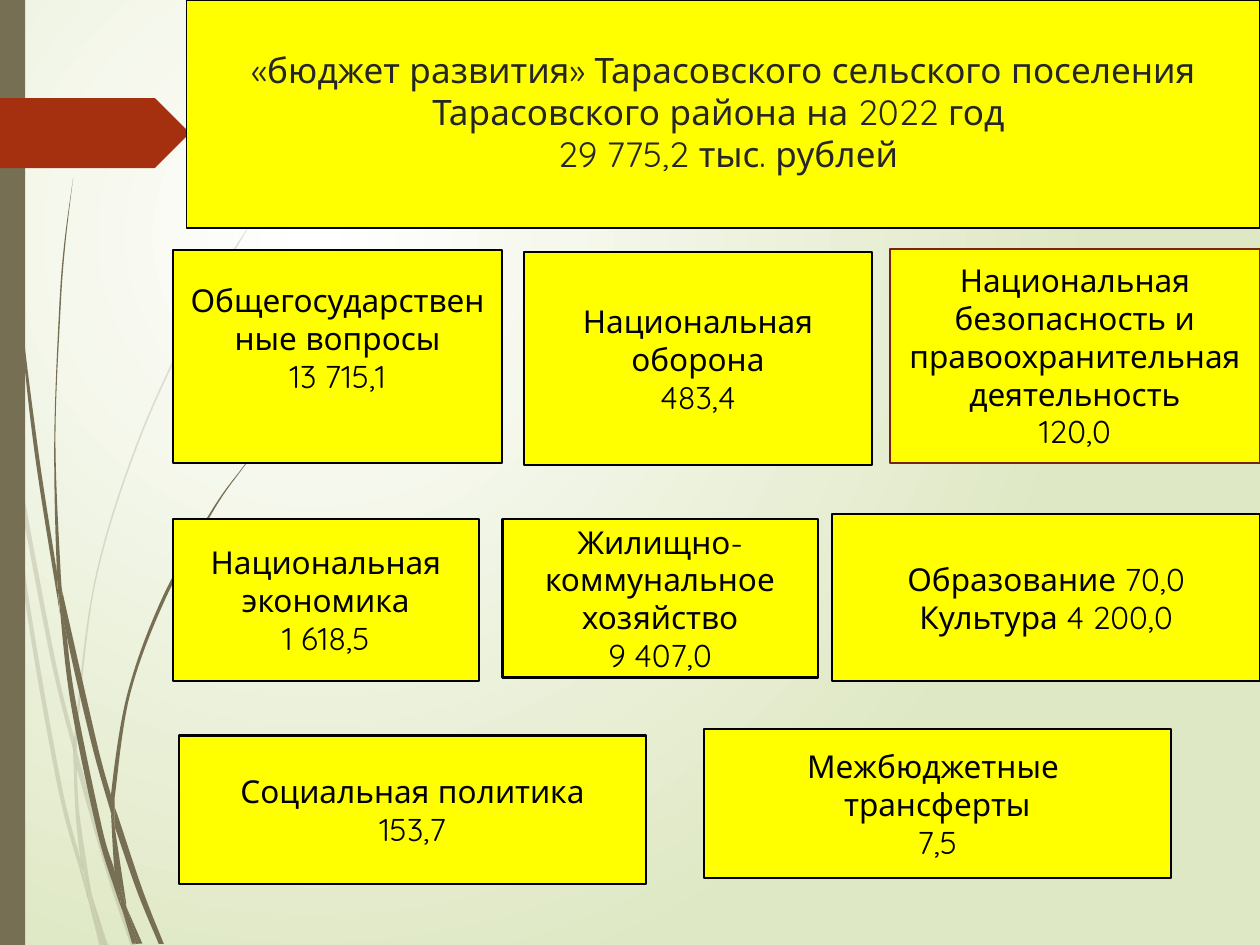
from lxml.etree import SubElement
from pptx import Presentation
from pptx.dml.color import RGBColor
from pptx.enum.shapes import MSO_SHAPE
from pptx.enum.text import MSO_ANCHOR, PP_ALIGN
from pptx.oxml.ns import qn
from pptx.util import Pt

FONT = "Quicksand"
LINE_HEIGHT = 1.2
COLORS = {
    "yellow": "FFFF00", "black": "000000", "title": "262626", "maroon": "7A240C",
    "olive": "766F54", "red": "A53010", "white": "FFFFFF", "pale": "DFE8C4",
}

# Grass blades: the two edges of each, one running down and one back up
PALE_BLADES = [
    ([(5.8, 252), (4.3, 231.8), (0, 203)], [(0, 215.3), (5, 247.7)]),
    ([(7.2, 248.4), (31, 374.4), (42.5, 421.9)],
     [(42.5, 431.3), (28.8, 375.8), (8.6, 270.7)]),
    ([(43.9, 439.2), (61.2, 499.7), (74.9, 540.7)],
     [(77.8, 540.7), (63.4, 498.2), (46.1, 437), (43.9, 429.1)]),
    ([(52.6, 511.9), (59.8, 540.7)], [(61.9, 540.7)]),
    ([(5.8, 252), (13.7, 338.4), (32.4, 447.1), (46.1, 499), (50.4, 514.1)],
     [(49.7, 509), (46.1, 491.8), (34.6, 445.7), (15.8, 337.7), (8.6, 270.7)]),
    ([(41.8, 431.3), (43.2, 465.1), (46.1, 491.8), (48.2, 498.2), (52.6, 511.9)],
     [(51.8, 508.3), (45.4, 465.1), (43.9, 439.2), (43.9, 437.8)]),
    ([(43.9, 420.5), (54.7, 332.6), (79.9, 251.3), (114.5, 176.4), (134.6, 142.6),
      (144.7, 126), (156.2, 110.9)],
     [(156.2, 110.2), (144.7, 126), (133.9, 141.8), (113.8, 175.7), (79.2, 250.6),
      (54, 331.9), (42.5, 420.5), (42.5, 421.9), (43.9, 429.1)]),
    ([(50.4, 514.1), (56.9, 540.7)], [(59, 540.7)]),
    ([(43.9, 437.8), (43.9, 439.2), (43.9, 429.1)], [(42.5, 421.9), (41.8, 431.3)]),
    ([(46.8, 491.8), (49.7, 509), (50.4, 514.1), (59, 540.7)],
     [(59.8, 540.7), (52.6, 511.9), (48.2, 498.2)]),
]
DARK_BLADES = [
    ([(1.4, 0), (2.2, 34.6), (3.6, 79.2), (10.1, 167.8), (19.4, 255.6),
      (33.1, 343.4), (33.8, 346.3)],
     [(32.4, 329), (32.4, 326.2), (21.6, 255.6), (10.8, 167), (4.3, 78.5),
      (2.9, 34.6), (2.2, 0)]),
    ([(36, 339.8), (38.2, 363.6), (52.6, 426.2), (63.4, 464.4)],
     [(63.4, 455.8), (63.4, 454.3), (55.4, 424.8), (36, 339.8)]),
    ([(65.5, 472.3), (78.5, 509.8), (90.7, 539.3)],
     [(93.6, 539.3), (81.4, 508.3), (67.7, 467.3), (65.5, 461.5)]),
    ([(33.8, 343.4), (40.3, 401), (55.4, 474.5), (66.2, 509.8), (69.8, 519.8)],
     [(69.1, 516.2), (65.5, 497.5), (58.3, 473), (43.2, 400.3), (38.2, 363.6)]),
    ([(36, 339.8), (34.6, 326.2), (31.7, 251.3), (34.6, 176.4), (37.4, 139),
      (41.8, 101.5)],
     [(41.8, 101.5), (36.7, 139), (33.8, 176.4), (31, 251.3), (32.4, 323.3),
      (35.3, 339.8)]),
    ([(72, 517.7), (79.2, 539.3)], [(81.4, 539.3)]),
    ([(32.4, 323.3), (32.4, 326.2), (33.8, 343.4), (38.2, 363.6)],
     [(36, 339.8), (35.3, 339.8)]),
    ([(65.5, 455.8), (74.2, 397.4), (94.3, 342.7), (121.7, 292.3), (137.5, 269.3),
      (146.2, 258.5), (155.5, 247.7)],
     [(154.8, 247.7), (146.2, 257.8), (137.5, 268.6), (121, 291.6), (92.9, 341.3),
      (72.7, 396.7), (63.4, 454.3), (65.5, 461.5)]),
    ([(69.8, 519.8), (75.6, 539.3)], [(77.8, 539.3)]),
    ([(63.4, 464.4), (65.5, 497.5), (69.1, 508.3), (72, 517.7)],
     [(72, 515.5), (65.5, 472.3), (64.8, 468.7)]),
    ([(63.4, 464.4), (64.8, 468.7), (65.5, 472.3)], [(65.5, 461.5), (63.4, 454.3)]),
    ([(65.5, 497.5), (69.1, 516.2), (69.8, 519.8), (77.8, 539.3)],
     [(79.2, 539.3), (72, 517.7), (69.1, 508.3)]),
]

# Spending cards: box, paragraphs, and any departures from the usual format
CARDS = [
    ((98.8, 143, 188.3, 121.7), ["Общегосударственные вопросы", "13 715,1"],
     {"lines_below": 1}),
    ((299.5, 144.1, 198.7, 121.7), ["Национальная оборона", "483,4"], {}),
    ((508.5, 142.1, 211.5, 122.4),
     ["Национальная безопасность и правоохранительная деятельность", "120,0"],
     {"line": "maroon"}),
    ((98.8, 296.6, 174.8, 92.5), ["Национальная экономика", "1 618,5"], {}),
    ((287.1, 296.6, 180.2, 90.6), ["Жилищно-коммунальное хозяйство", "9 407,0"], {}),
    ((475.6, 293.8, 244.4, 95.3), ["Образование 70,0", "Культура 4 200,0"], {}),
    ((402.1, 416.7, 267.1, 85), ["Межбюджетные \vтрансферты", "7,5"], {}),
    ((102.2, 420.3, 267.1, 85), ["Социальная политика", "153,7"], {}),
]
TITLE = ("«бюджет развития» Тарасовского сельского поселения "
         "Тарасовского района на 2022 год \v 29 775,2 тыс. рублей")


def rgb(name):
    return RGBColor.from_string(COLORS[name])


def paint(shape, fill, line=None, width=1.25, alpha=None):
    shape.shadow.inherit = False
    shape.fill.solid()
    shape.fill.fore_color.rgb = rgb(fill)
    if alpha is not None:
        color = shape.element.spPr.find(qn("a:solidFill"))[0]
        SubElement(color, qn("a:alpha"), val=str(alpha * 1000))
    if line:
        shape.line.color.rgb = rgb(line)
        shape.line.width = Pt(width)
    else:
        shape.line.fill.background()


def add_outline(shapes, left, top, points, fill, alpha=None):
    vertices = [(Pt(left + x), Pt(top + y)) for x, y in points]
    builder = shapes.build_freeform(*vertices[0])
    builder.add_line_segments(vertices[1:], close=True)
    shape = builder.convert_to_shape()
    paint(shape, fill, alpha=alpha)
    return shape


def bend_edge(lines, nodes):
    """Turn the straight segments between the nodes into smooth cubic curves."""
    padded = [nodes[0], *nodes, nodes[-1]]
    for line, a, b, c, d in zip(lines, padded, padded[1:], padded[2:], padded[3:]):
        controls = ([q + (r - p) / 6 for p, q, r in zip(a, b, c)],
                    [q - (r - p) / 6 for p, q, r in zip(b, c, d)], c)
        curve = line.makeelement(qn("a:cubicBezTo"))
        for x, y in controls:
            SubElement(curve, qn("a:pt"), x=str(round(x)), y=str(round(y)))
        line.getparent().replace(line, curve)


def add_grass(page, left, top, blades, alpha=None):
    group = page.shapes.add_group_shape()
    for down, up in blades:
        shape = add_outline(group.shapes, left, top, down + up, "olive", alpha)
        nodes = [(int(point.get("x")), int(point.get("y")))
                 for point in shape.element.iter(qn("a:pt"))]
        lines = list(shape.element.iter(qn("a:lnTo")))
        turn = len(down)
        bend_edge(lines[:turn - 1], nodes[:turn])
        bend_edge(lines[turn:], nodes[turn:])


def add_box(page, box, paragraphs, size=18, color="black", line="black", width=1.25,
            anchor=MSO_ANCHOR.MIDDLE, lines_above=0, lines_below=0):
    shape = page.shapes.add_shape(MSO_SHAPE.RECTANGLE, *map(Pt, box))
    paint(shape, "yellow", line, width)
    frame = shape.text_frame
    frame.word_wrap = True
    frame.vertical_anchor = anchor
    frame.margin_top = Pt(3.6 + lines_above * size * LINE_HEIGHT)
    frame.margin_bottom = Pt(3.6 + lines_below * size * LINE_HEIGHT)
    for index, text in enumerate(paragraphs):
        para = frame.add_paragraph() if index else frame.paragraphs[0]
        para.text = text
        para.alignment = PP_ALIGN.CENTER
        for span in para.runs:
            span.font.name = FONT
            span.font.size = Pt(size)
            span.font.color.rgb = rgb(color)


def set_background(page):
    fill = page.background.fill
    fill.gradient()
    for stop, name in zip(fill.gradient_stops, ("white", "pale")):
        stop.color.rgb = rgb(name)
    gradient = page.element.find(".//" + qn("a:gradFill"))
    gradient.remove(gradient.find(qn("a:lin")))
    shade = SubElement(gradient, qn("a:path"), path="circle")
    SubElement(shade, qn("a:fillToRect"), l="50000", t="50000", r="100000", b="100000")


def add_decoration(page, left, top, height):
    add_grass(page, left, top, PALE_BLADES, alpha=20)
    add_grass(page, left, top, DARK_BLADES)
    strip = page.shapes.add_shape(
        MSO_SHAPE.RECTANGLE, Pt(left), Pt(top), Pt(14.4), Pt(height))
    paint(strip, "olive")
    arrow = [(0, 0), (88.5, 0), (107.5, 19), (107.5, 21), (88.5, 40), (0, 40)]
    add_outline(page.shapes, left, top + 56, arrow, "red")


def main():
    deck = Presentation()
    deck.slide_width, deck.slide_height = Pt(720), Pt(540)
    page = deck.slides.add_slide(deck.slide_layouts[6])
    set_background(page)
    add_decoration(page, 0, 0, 540)
    # Title banner
    add_box(page, (106.6, 0, 613.4, 130.4), [TITLE], size=20, color="title",
            width=0.75, anchor=MSO_ANCHOR.TOP, lines_above=1)
    for box, paragraphs, style in CARDS:
        add_box(page, box, paragraphs, **style)
    deck.save("out.pptx")


if __name__ == "__main__":
    main()
